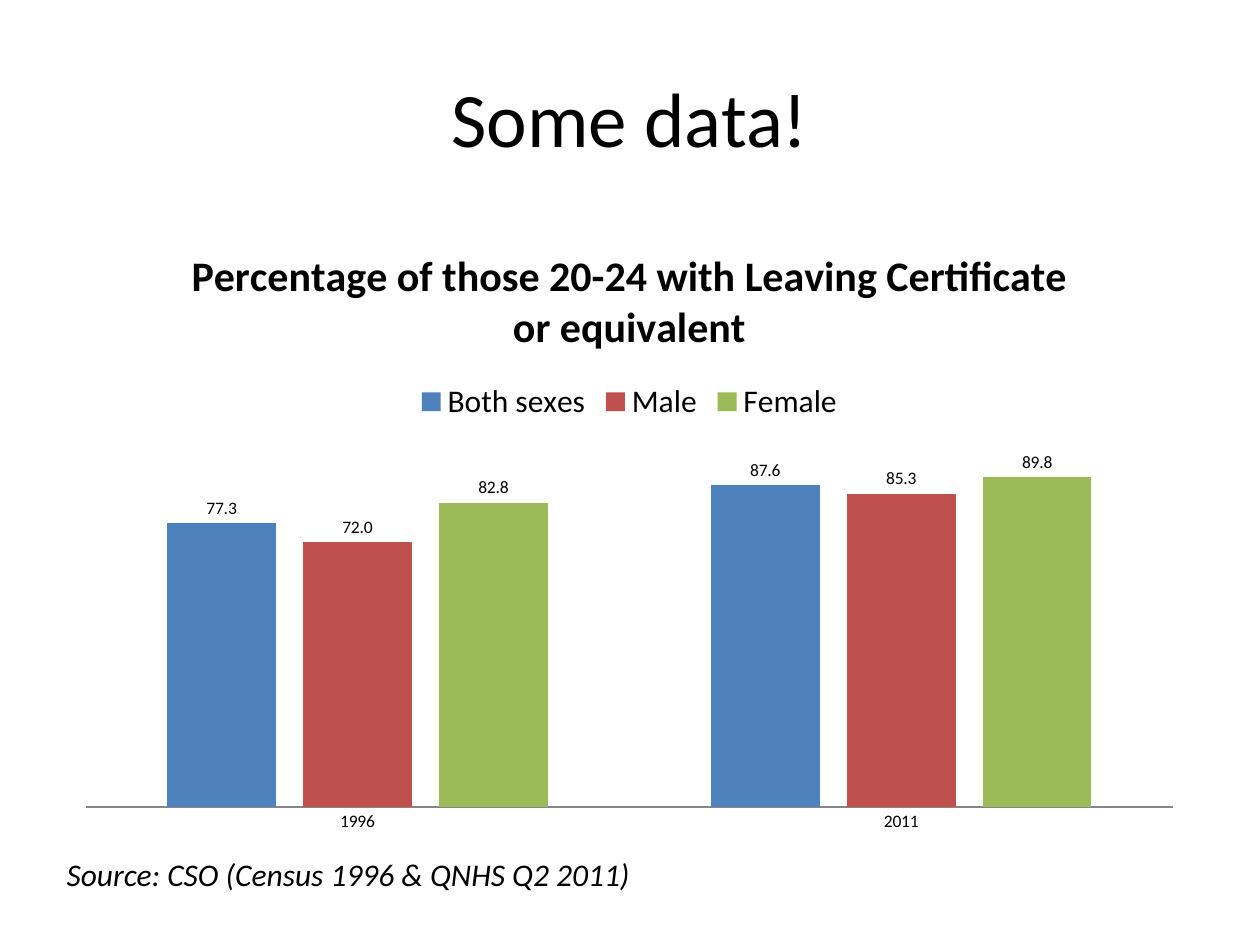
from pptx import Presentation
from pptx.chart.data import CategoryChartData
from pptx.dml.color import RGBColor
from pptx.enum.chart import (XL_CHART_TYPE as ChartType, XL_LABEL_POSITION as LabelPosition,
                             XL_LEGEND_POSITION as LegendPosition, XL_TICK_MARK as TickMark)
from pptx.enum.text import MSO_ANCHOR as Anchor, MSO_AUTO_SIZE as AutoSize, PP_ALIGN as Align
from pptx.util import Inches, Pt

COLORS = {"text": "000000", "axis": "868686",
          "Both sexes": "4F81BD", "Male": "C0504D", "Female": "9BBB59"}
YEARS = ["1996", "2011"]
RATES = {"Both sexes": (77.3, 87.6), "Male": (72.0, 85.3), "Female": (82.8, 89.8)}


def set_all(target, values):
    for name, value in values.items():
        setattr(target, name, value)


class SlideBuilder:
    font_name = "Calibri"
    number_format = "0.0"

    def __init__(self, page):
        self.page = page

    def style(self, font, size, **values):
        set_all(font, {"name": self.font_name, "size": Pt(size), **values})
        font.color.rgb = RGBColor.from_string(COLORS["text"])

    def add_text(self, frame, text, size, align, **values):
        para = frame.paragraphs[0]
        para.alignment = align
        span = para.add_run()
        span.text = text
        self.style(span.font, size, **values)

    def title(self, text, area):
        box = self.page.shapes.title
        set_all(box, dict(zip(("left", "top", "width", "height"), map(Inches, area))))
        box.text_frame.vertical_anchor = Anchor.MIDDLE
        self.add_text(box.text_frame, text, 44, Align.CENTER)

    def note(self, text, area):
        frame = self.page.shapes.add_textbox(*map(Inches, area)).text_frame
        set_all(frame, {"word_wrap": True, "auto_size": AutoSize.SHAPE_TO_FIT_TEXT})
        self.add_text(frame, text, 18, Align.LEFT, italic=True)

    def column_chart(self, heading, categories, series, area):
        data = CategoryChartData(number_format=self.number_format)
        data.categories = categories
        for name, values in series.items():
            data.add_series(name, values)
        chart = self.page.shapes.add_chart(
            ChartType.COLUMN_CLUSTERED, *map(Inches, area), data).chart
        self.style(chart.font, 10)
        self.add_text(chart.chart_title.text_frame, heading, 24, Align.CENTER, bold=True)

        chart.has_legend = True
        set_all(chart.legend, {"position": LegendPosition.TOP, "include_in_layout": False})
        self.style(chart.legend.font, 18)

        set_all(chart.value_axis, {"visible": False, "has_major_gridlines": False,
                                   "minimum_scale": 0, "maximum_scale": 100})
        axis = chart.category_axis
        set_all(axis, {"major_tick_mark": TickMark.NONE, "minor_tick_mark": TickMark.NONE})
        axis.format.line.color.rgb = RGBColor.from_string(COLORS["axis"])

        plot = chart.plots[0]
        set_all(plot, {"gap_width": 150, "overlap": -25, "vary_by_categories": False})
        for bars in plot.series:
            bars.format.fill.solid()
            bars.format.fill.fore_color.rgb = RGBColor.from_string(COLORS[bars.name])
            set_all(bars.data_labels, {
                "show_value": True, "number_format": self.number_format,
                "number_format_is_linked": False, "position": LabelPosition.OUTSIDE_END})


def main():
    deck = Presentation()
    set_all(deck, {"slide_width": Inches(10), "slide_height": Inches(7.5)})
    builder = SlideBuilder(deck.slides.add_slide(deck.slide_layouts[5]))
    builder.title("Some data!", (0.5, 0.3, 9, 1.25))
    builder.column_chart("Percentage of those 20-24 with Leaving Certificate or equivalent",
                         YEARS, RATES, (0.5, 1.75, 8.99, 4.95))
    builder.note("Source: CSO (Census 1996 & QNHS Q2 2011)", (0.43, 6.74, 5.2, 0.4))
    deck.save("out.pptx")


if __name__ == "__main__":
    main()
